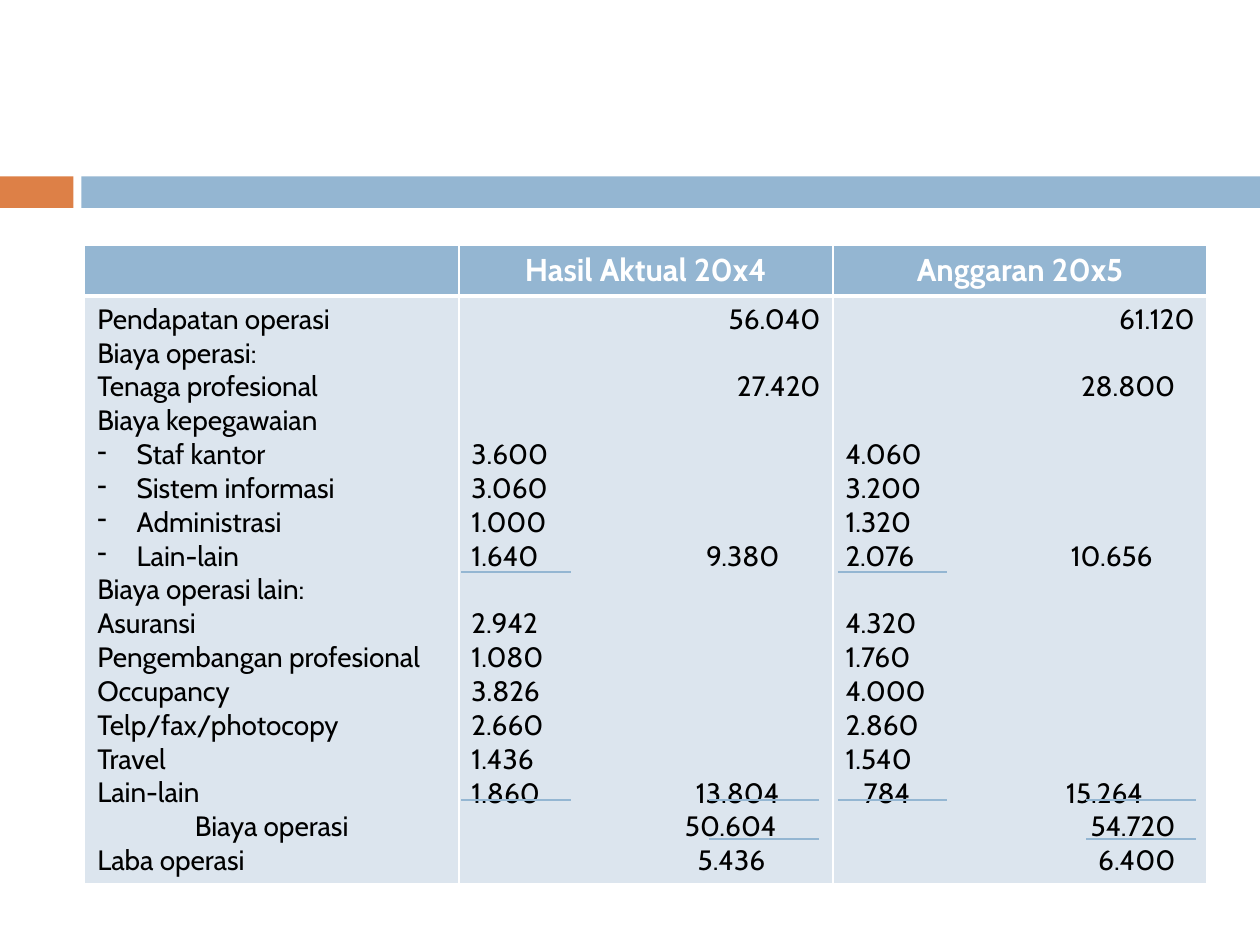
from dataclasses import dataclass

from lxml import etree
from pptx import Presentation
from pptx.dml.color import RGBColor
from pptx.enum.shapes import MSO_CONNECTOR, MSO_SHAPE
from pptx.enum.text import PP_ALIGN
from pptx.oxml.ns import qn
from pptx.util import Pt

LEFT, CENTER, RIGHT = PP_ALIGN.LEFT, PP_ALIGN.CENTER, PP_ALIGN.RIGHT
RECTANGLE = MSO_SHAPE.RECTANGLE
STRAIGHT = MSO_CONNECTOR.STRAIGHT


@dataclass(frozen=True)
class Theme:
    font: str = "Cabin"
    header_size: float = 18
    body_size: float = 16
    line_pitch: float = 19.35
    blue: str = "94B6D2"
    orange: str = "DD8047"
    pale: str = "DCE5EE"
    white: str = "FFFFFF"
    black: str = "000000"


@dataclass(frozen=True)
class Bar:
    left: float
    width: float
    color: str


@dataclass(frozen=True)
class Entry:
    """One statement line; row counts text lines from the top of the cell."""
    row: int
    text: str
    align: PP_ALIGN = LEFT
    right_indent: float = 0
    bullet: bool = False
    tabs: tuple[float, ...] = ()


@dataclass(frozen=True)
class Rule:
    left: float
    top: float


THEME = Theme()
BARS = [Bar(0, 42, THEME.orange), Bar(46.5, 673.5, THEME.blue)]
HEADERS = ["", "Hasil Aktual 20x4", "Anggaran 20x5"]
LABELS = [
    "Pendapatan operasi", "Biaya operasi:", "Tenaga profesional", "Biaya kepegawaian",
    "Staf kantor", "Sistem informasi", "Administrasi", "Lain-lain",
    "Biaya operasi lain:", "Asuransi", "Pengembangan profesional", "Occupancy",
    "Telp/fax/photocopy", "Travel", "Lain-lain", "Biaya operasi", "Laba operasi",
]
BULLET_ROWS = range(4, 8)
SUBTOTAL_ROW = 15


def detail(first_row: int, *amounts: str) -> list[Entry]:
    return [Entry(row, amount) for row, amount in enumerate(amounts, first_row)]


LABEL_ENTRIES = [
    Entry(row, text, CENTER if row == SUBTOTAL_ROW else LEFT, bullet=row in BULLET_ROWS)
    for row, text in enumerate(LABELS)
]
ACTUAL_ENTRIES = [
    Entry(0, "56.040", RIGHT),
    Entry(2, "27.420", RIGHT),
    *detail(4, "3.600", "3.060", "1.000"),
    Entry(7, "1.640\t9.380", tabs=(176,)),
    *detail(9, "2.942", "1.080", "3.826", "2.660", "1.436"),
    Entry(14, "1.860\t13.804", tabs=(176,)),
    Entry(15, "50.604", RIGHT, 25),
    Entry(16, "5.436", RIGHT, 31.5),
]
BUDGET_ENTRIES = [
    Entry(0, "61.120", RIGHT),
    Entry(2, "28.800", RIGHT, 11),
    *detail(4, "4.060", "3.200", "1.320"),
    Entry(7, "2.076\t10.656", tabs=(175.5,)),
    *detail(9, "4.320", "1.760", "4.000", "2.860", "1.540"),
    Entry(14, "\t784\t15.264", tabs=(37, 170)),
    Entry(15, "54.720", RIGHT),
    Entry(16, "6.400", RIGHT),
]
RULE_WIDTH = 62.6
DETAIL_LEFTS, TOTAL_LEFTS = (263.5, 478.8), (405.4, 620.6)
RULES = [
    Rule(left, top)
    for lefts, tops in ((DETAIL_LEFTS, (326.9, 457.2)), (TOTAL_LEFTS, (457.2, 479.5)))
    for left in lefts
    for top in tops
]


def rgb(color: str) -> RGBColor:
    return RGBColor.from_string(color)


def draw_bar(slide, bar: Bar) -> None:
    shape = slide.shapes.add_shape(RECTANGLE, Pt(bar.left), Pt(100.8), Pt(bar.width), Pt(18))
    shape.shadow.inherit = False
    shape.fill.solid()
    shape.fill.fore_color.rgb = rgb(bar.color)
    shape.line.fill.background()


def draw_rule(slide, rule: Rule) -> None:
    connector = slide.shapes.add_connector(
        STRAIGHT, Pt(rule.left), Pt(rule.top), Pt(rule.left + RULE_WIDTH), Pt(rule.top))
    connector.line.color.rgb = rgb(THEME.blue)
    connector.line.width = Pt(0.79)
    etree.SubElement(connector._element.spPr, qn("a:effectLst"))


def style_cell(cell, fill: str, top: float, bottom: float) -> None:
    """Set white borders (widths in points), then the fill that must follow them."""
    properties = cell._tc.get_or_add_tcPr()
    for side, width in (("L", 1), ("R", 1), ("T", top), ("B", bottom)):
        line = etree.SubElement(properties, qn(f"a:ln{side}"), w=str(Pt(width)))
        solid = etree.SubElement(line, qn("a:solidFill"))
        etree.SubElement(solid, qn("a:srgbClr"), val=THEME.white)
    cell.fill.solid()
    cell.fill.fore_color.rgb = rgb(fill)


def add_run(paragraph, text: str, size: float, color: str, bold: bool) -> None:
    run = paragraph.add_run()
    run.text = text
    run.font.name = THEME.font
    run.font.size = Pt(size)
    run.font.bold = bold
    run.font.color.rgb = rgb(color)


def format_entry(paragraph, entry: Entry) -> None:
    """Apply indents, bullet and right-aligned tab stops."""
    properties = paragraph._p.get_or_add_pPr()
    if entry.right_indent:
        properties.set("marR", str(Pt(entry.right_indent)))
    if entry.bullet:
        properties.set("marL", str(Pt(22.5)))
        properties.set("indent", str(Pt(-22.5)))
        etree.SubElement(properties, qn("a:buChar"), char="-")
    if entry.tabs:
        tab_list = etree.SubElement(properties, qn("a:tabLst"))
        for position in entry.tabs:
            etree.SubElement(tab_list, qn("a:tab"), pos=str(Pt(position)), algn="r")


def fill_entries(cell, entries: list[Entry]) -> None:
    next_row = 0
    for index, entry in enumerate(entries):
        paragraph = cell.text_frame.add_paragraph() if index else cell.text_frame.paragraphs[0]
        paragraph.alignment = entry.align
        if entry.row > next_row:
            paragraph.space_before = Pt((entry.row - next_row) * THEME.line_pitch)
        format_entry(paragraph, entry)
        add_run(paragraph, entry.text, THEME.body_size, THEME.black, False)
        next_row = entry.row + 1


def draw_statement(slide) -> None:
    header_height, body_height, column_width = 29.2, 334.4, 213.8
    table = slide.shapes.add_table(
        2, len(HEADERS), Pt(48.4), Pt(140), Pt(column_width * len(HEADERS)),
        Pt(header_height + body_height)).table
    table.rows[0].height = Pt(header_height)
    table.rows[1].height = Pt(body_height)
    bodies = [LABEL_ENTRIES, ACTUAL_ENTRIES, BUDGET_ENTRIES]
    for index, (header, entries) in enumerate(zip(HEADERS, bodies)):
        table.columns[index].width = Pt(column_width)
        header_cell, body_cell = table.cell(0, index), table.cell(1, index)
        style_cell(header_cell, THEME.blue, 1, 3)
        style_cell(body_cell, THEME.pale, 3, 1)
        if header:
            paragraph = header_cell.text_frame.paragraphs[0]
            paragraph.alignment = CENTER
            add_run(paragraph, header, THEME.header_size, THEME.white, True)
        fill_entries(body_cell, entries)


def main() -> None:
    presentation = Presentation()
    presentation.slide_width, presentation.slide_height = Pt(720), Pt(540)
    slide = presentation.slides.add_slide(presentation.slide_layouts[6])
    for bar in BARS:
        draw_bar(slide, bar)
    draw_statement(slide)
    for rule in RULES:
        draw_rule(slide, rule)
    presentation.save("out.pptx")


if __name__ == "__main__":
    main()
